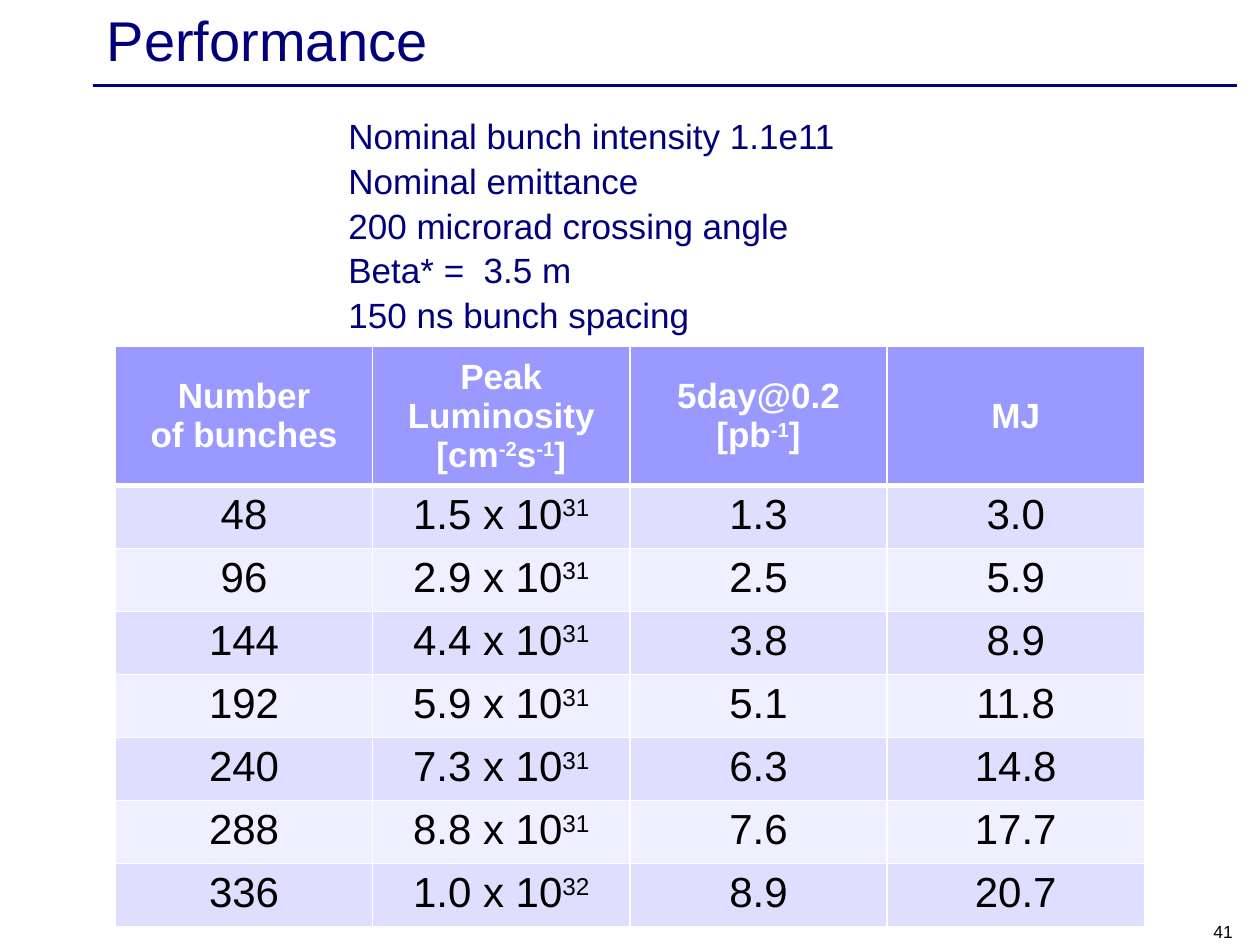
"""Build the Performance slide with beam parameters and a luminosity table."""
import dataclasses

import lxml.etree
import pptx
import pptx.dml.color
import pptx.enum.shapes
import pptx.enum.text
import pptx.oxml.ns
import pptx.util

Pt = pptx.util.Pt
RGBColor = pptx.dml.color.RGBColor
Align = pptx.enum.text.PP_ALIGN
Anchor = pptx.enum.text.MSO_ANCHOR
qn = pptx.oxml.ns.qn


@dataclasses.dataclass(frozen=True)
class Theme:
    font: str = "Arial"
    navy: str = "00007D"
    white: str = "FFFFFF"
    black: str = "000000"
    header: str = "9999FF"
    bands: tuple = ("DEDEFF", "EFEFFF")
    title_size: int = 32
    text_size: int = 20
    value_size: int = 24
    number_size: int = 10


theme = Theme()


def write_text(frame, text, *, size, color, bold=False, align=Align.LEFT,
               anchor=Anchor.TOP, spacing=None):
    """Blank lines split paragraphs, newlines break lines, ^...^ is superscript."""
    frame.word_wrap = True
    frame.vertical_anchor = anchor
    for index, block in enumerate(text.split("\n\n")):
        paragraph = frame.add_paragraph() if index else frame.paragraphs[0]
        paragraph.alignment = align
        paragraph.line_spacing = spacing
        paragraph.font.size = Pt(size)
        for line_index, line in enumerate(block.split("\n")):
            if line_index:
                paragraph.add_line_break()
            for part_index, part in enumerate(line.split("^")):
                if not part:
                    continue
                run = paragraph.add_run()
                run.text = part
                run.font.name = theme.font
                run.font.size = Pt(size)
                run.font.bold = bold
                run.font.color.rgb = RGBColor.from_string(color)
                if part_index % 2:
                    run.font._element.set("baseline", "30000")


def set_borders(cell, bottom):
    properties = cell._tc.get_or_add_tcPr()
    widths = {"a:lnL": 1, "a:lnR": 1, "a:lnT": 1, "a:lnB": bottom}
    for position, (tag, width) in enumerate(widths.items()):
        line = lxml.etree.Element(qn(tag), w=str(Pt(width)))
        fill = lxml.etree.SubElement(line, qn("a:solidFill"))
        lxml.etree.SubElement(fill, qn("a:srgbClr"), val=theme.white)
        properties.insert(position, line)


presentation = pptx.Presentation()
presentation.slide_width = Pt(720)
presentation.slide_height = Pt(540)
slide = presentation.slides.add_slide(presentation.slide_layouts[6])

rule = slide.shapes.add_connector(
    pptx.enum.shapes.MSO_CONNECTOR.STRAIGHT, Pt(53), Pt(49), Pt(707), Pt(49))
rule.line.color.rgb = RGBColor.from_string(theme.navy)
rule.line.width = Pt(2)
lxml.etree.SubElement(rule._element.spPr, qn("a:effectLst"))

title = slide.shapes.add_textbox(Pt(54), Pt(2), Pt(648), Pt(41))
write_text(title.text_frame, "Performance", size=theme.title_size,
           color=theme.navy, anchor=Anchor.MIDDLE)

number = slide.shapes.add_textbox(Pt(543.5), Pt(522), Pt(168), Pt(20))
write_text(number.text_frame, "41", size=theme.number_size, color=theme.black,
           align=Align.RIGHT, anchor=Anchor.BOTTOM)

headings = ["Number\nof bunches", "Peak\nLuminosity\n\n[cm^-2^s^-1^]",
            "5day@0.2\n[pb^-1^]", "MJ"]
results = [
    ["48", "1.5 x 10^31^", "1.3", "3.0"],
    ["96", "2.9 x 10^31^", "2.5", "5.9"],
    ["144", "4.4 x 10^31^", "3.8", "8.9"],
    ["192", "5.9 x 10^31^", "5.1", "11.8"],
    ["240", "7.3 x 10^31^", "6.3", "14.8"],
    ["288", "8.8 x 10^31^", "7.6", "17.7"],
    ["336", "1.0 x 10^32^", "8.9", "20.7"],
]
rows = [headings] + results
header_height, row_height = 74, 34
table = slide.shapes.add_table(
    len(rows), len(headings), Pt(66), Pt(198), Pt(588),
    Pt(header_height + row_height * len(results))).table
table.horz_banding = False

for row_index, values in enumerate(rows):
    is_header = row_index == 0
    table.rows[row_index].height = Pt(header_height if is_header else row_height)
    fill_color = theme.header if is_header else theme.bands[(row_index - 1) % 2]
    for column_index, value in enumerate(values):
        cell = table.cell(row_index, column_index)
        cell.fill.solid()
        cell.fill.fore_color.rgb = RGBColor.from_string(fill_color)
        set_borders(cell, bottom=3 if is_header else 1)
        write_text(cell.text_frame, value, bold=is_header, align=Align.CENTER,
                   size=theme.text_size if is_header else theme.value_size,
                   color=theme.white if is_header else theme.black)
        cell.vertical_anchor = Anchor.MIDDLE if is_header else Anchor.TOP

parameters = slide.shapes.add_textbox(Pt(192), Pt(60), Pt(342), Pt(128))
write_text(
    parameters.text_frame,
    "Nominal bunch intensity 1.1e11\nNominal emittance\n"
    "200 microrad crossing angle\nBeta* =  3.5 m\n150 ns bunch spacing",
    size=theme.text_size, color=theme.navy, spacing=1.07)

presentation.save("out.pptx")
